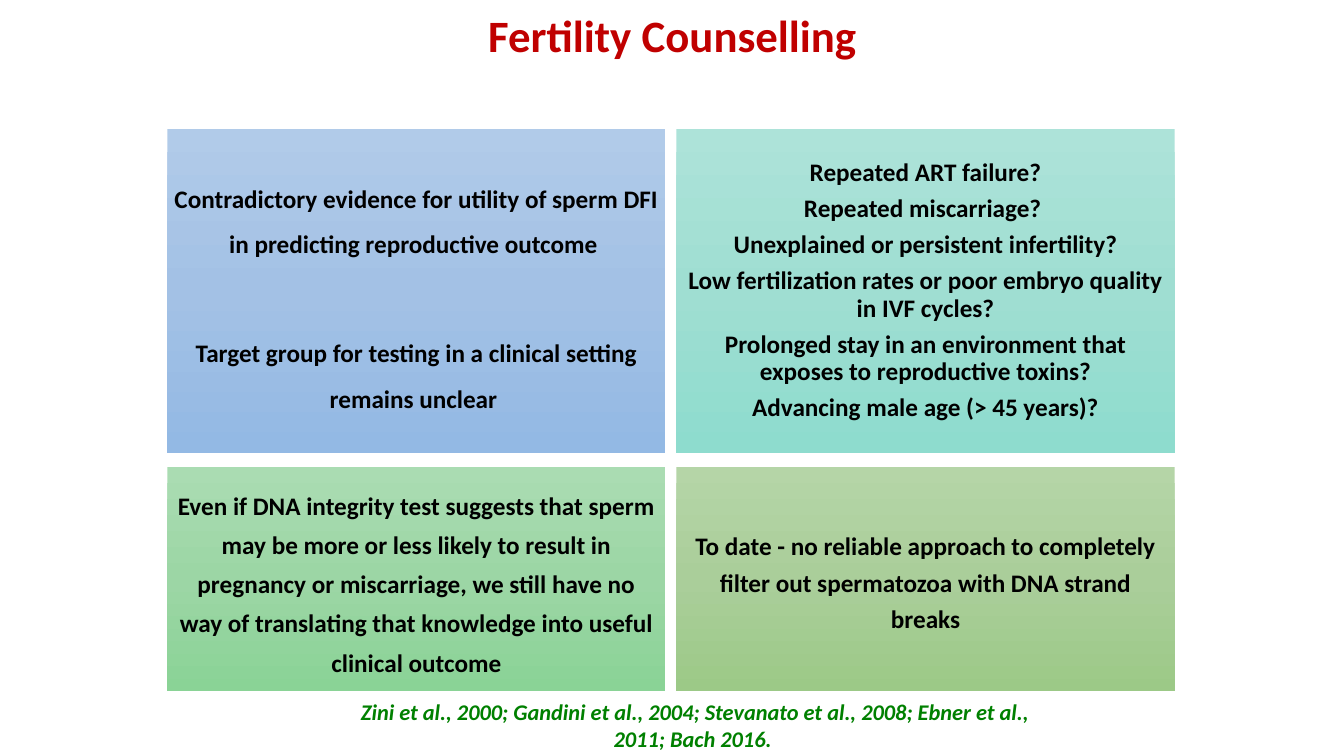
from copy import deepcopy
from dataclasses import dataclass

from pptx import Presentation
from pptx.dml.color import RGBColor
from pptx.enum.shapes import MSO_SHAPE
from pptx.enum.text import MSO_ANCHOR, PP_ALIGN
from pptx.oxml.ns import qn
from pptx.util import Inches, Pt

RECT = MSO_SHAPE.RECTANGLE
TOP, MIDDLE = MSO_ANCHOR.TOP, MSO_ANCHOR.MIDDLE
CENTER = PP_ALIGN.CENTER


@dataclass(frozen=True)
class Theme:
    font: str = "Calibri"
    title: str = "C00000"
    body: str = "000000"
    cite: str = "008000"
    blue: tuple = ("B1CBE9", "A3C1E5", "93B9E4")
    teal: tuple = ("ADE3D9", "9FDED2", "8EDCCE")
    green: tuple = ("AADCB2", "9CD6A5", "8AD396")
    olive: tuple = ("B5D5A7", "AACE9A", "9CC987")
    title_size: int = 32
    body_size: int = 18
    cite_size: int = 16


THEME = Theme()

# Fill, line spacing, gap after each paragraph in points, paragraphs
CARDS = [
    (THEME.blue, 1.5, 45.5, [
        "Contradictory evidence for utility of sperm DFI in predicting reproductive outcome ",
        "Target group for testing in a clinical setting remains unclear ",
    ]),
    (THEME.teal, 0.9, 6.3, [
        "Repeated ART failure?",
        "Repeated miscarriage? ",
        "Unexplained or persistent infertility?",
        "Low fertilization rates or poor embryo quality in IVF cycles?",
        "Prolonged stay in an environment that exposes to reproductive toxins?",
        "Advancing male age (> 45 years)?",
    ]),
    (THEME.green, 1.3, 6.3, [
        "Even if DNA integrity test suggests that sperm may be more or less likely "
        "to result in pregnancy or miscarriage, we still have no way of translating "
        "that knowledge into useful clinical outcome",
    ]),
    (THEME.olive, 1.2, 6.3, [
        "To date - no reliable approach to completely filter out spermatozoa "
        "with DNA strand breaks",
    ]),
]
LEFT, WIDTH, STEP = 1.66, 4.94, 5.05
ROWS = [(1.28, 3.21), (4.63, 2.23)]


def write(frame, lines, size, color, italic=False, spacing=1.0, gap=0, anchor=TOP):
    """Fill a text frame with bold centred paragraphs, gap points apart."""
    frame.word_wrap = True
    frame.vertical_anchor = anchor
    for i, line in enumerate(lines):
        par = frame.paragraphs[0] if i == 0 else frame.add_paragraph()
        par.alignment = CENTER
        par.line_spacing = spacing
        par.space_after = Pt(gap if i < len(lines) - 1 else min(gap, 6.3))
        run = par.add_run()
        run.text = line
        font = run.font
        font.name, font.size = THEME.font, Pt(size)
        font.bold, font.italic = True, italic
        font.color.rgb = RGBColor.from_string(color)


class Board:
    def __init__(self, theme, slide):
        self.theme = theme
        self.slide = slide

    def label(self, text, box, size, color, **style):
        shape = self.slide.shapes.add_textbox(*map(Inches, box))
        write(shape.text_frame, [text], size, color, **style)

    def shade(self, shape, colors):
        """Apply a three-stop gradient running from top to bottom."""
        fill = shape.fill
        fill.gradient()
        fill.gradient_angle = 270
        first = shape._element.spPr.find(".//" + qn("a:gs"))
        first.addnext(deepcopy(first))
        for i, (stop, color) in enumerate(zip(fill.gradient_stops, colors)):
            stop.position = i / 2
            stop.color.rgb = RGBColor.from_string(color)

    def card(self, lines, box, colors, spacing, gap):
        shape = self.slide.shapes.add_shape(RECT, *map(Inches, box))
        shape.shadow.inherit = False
        shape.line.fill.background()
        self.shade(shape, colors)
        frame = shape.text_frame
        frame.margin_left = frame.margin_right = Inches(0.07)
        frame.margin_top = frame.margin_bottom = Inches(0.07)
        write(frame, lines, self.theme.body_size, self.theme.body,
              spacing=spacing, gap=gap, anchor=MIDDLE)


def main():
    deck = Presentation()
    deck.slide_width, deck.slide_height = Inches(13.33), Inches(7.5)
    board = Board(THEME, deck.slides.add_slide(deck.slide_layouts[6]))
    board.label("Fertility Counselling", (2.17, 0.09, 9, 1.25),
                THEME.title_size, THEME.title, spacing=0.9)
    for i, (colors, spacing, gap, lines) in enumerate(CARDS):
        row, col = divmod(i, 2)
        top, height = ROWS[row]
        board.card(lines, (LEFT + col * STEP, top, WIDTH, height),
                   colors, spacing, gap)
    board.label(
        "Zini et al., 2000; Gandini et al., 2004; Stevanato et al., 2008; "
        "Ebner et al., 2011; Bach 2016. ",
        (3.32, 6.88, 7.15, 0.64), THEME.cite_size, THEME.cite, italic=True)
    deck.save("out.pptx")


if __name__ == "__main__":
    main()
